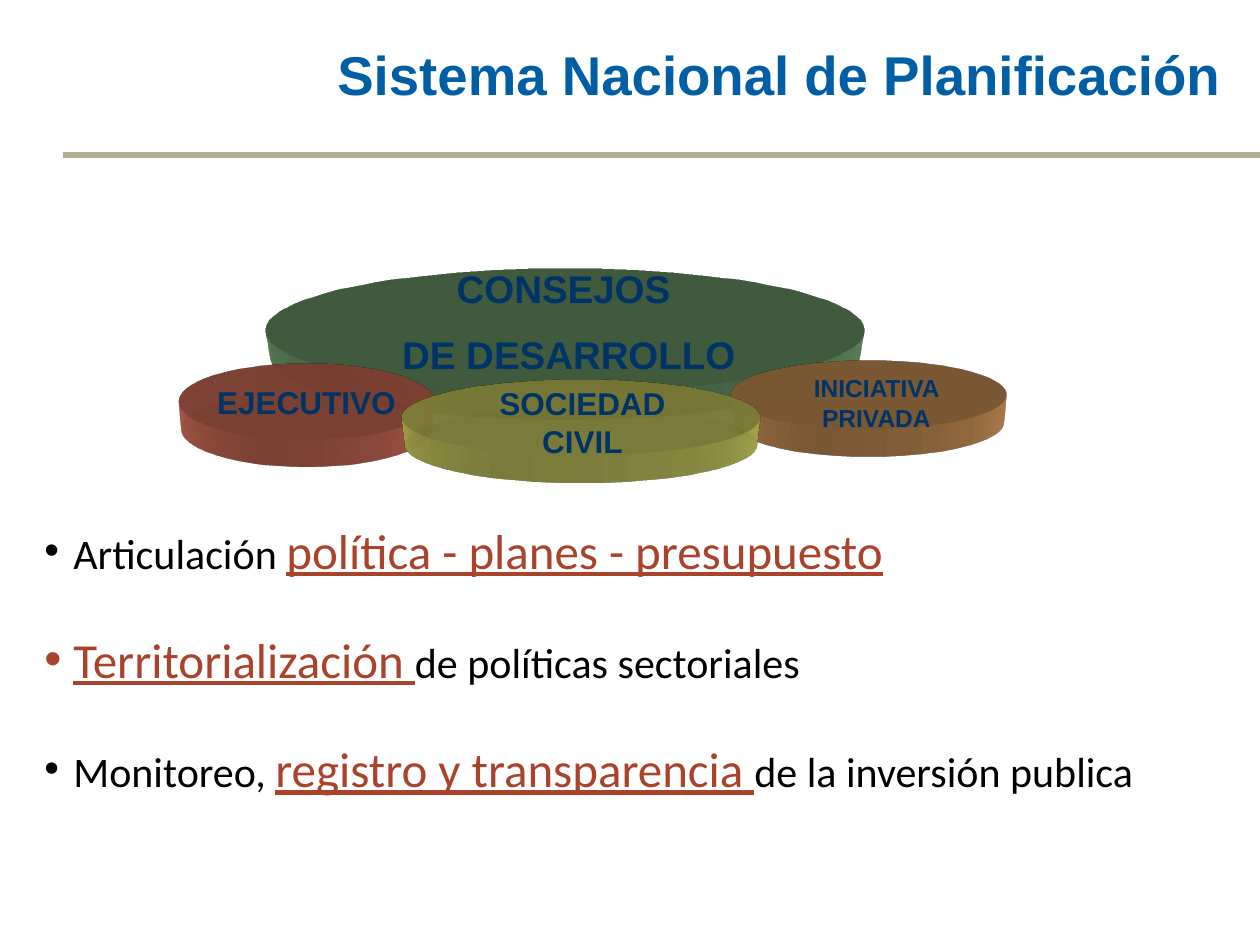
from lxml.etree import SubElement
from pptx import Presentation
from pptx.dml.color import RGBColor
from pptx.enum.shapes import MSO_CONNECTOR, MSO_SHAPE
from pptx.enum.text import MSO_ANCHOR, PP_ALIGN
from pptx.oxml.ns import qn
from pptx.util import Pt

PX = 914400 / 126


def px(length):
    return round(length * PX)


def color(value):
    return RGBColor.from_string(value)


def add_node(parent, tag, **attributes):
    return SubElement(parent, qn(f"a:{tag}"), **attributes)


def add_run(paragraph, text, size=24, font="Calibri", tint="000000", bold=False, underline=False):
    run = paragraph.add_run()
    run.text = text
    run.font.size = Pt(size)
    run.font.name = font
    run.font.bold = bold
    run.font.underline = underline
    run.font.color.rgb = color(tint)


class PlanningSlide:
    """Holds the style and the current slide and draws each kind of element."""

    heading = {"font": "Arial", "tint": "005EA4", "bold": True, "size": 31.2}
    label_style = {"font": "Arial", "tint": "003366", "bold": True}
    plain = {}
    accent = {"size": 28, "tint": "A9432B", "underline": True}

    def __init__(self, deck):
        self.slide = deck.slides.add_slide(deck.slide_layouts[6])
        self.shapes = self.slide.shapes

    def frame(self, left, top, width, height):
        frame = self.shapes.add_textbox(px(left), px(top), px(width), px(height)).text_frame
        frame.word_wrap = True
        return frame

    def title(self, text, *box):
        frame = self.frame(*box)
        frame.vertical_anchor = MSO_ANCHOR.MIDDLE
        add_run(frame.paragraphs[0], text, **self.heading)

    def rule(self, left, right, y):
        line = self.shapes.add_connector(MSO_CONNECTOR.STRAIGHT, px(left), px(y), px(right), px(y))
        line.line.color.rgb = color("B1B095")
        line.line.width = Pt(3)
        add_node(line._element.spPr, "effectLst")

    def disc(self, left, top, width, height, tint, alpha=100):
        disc = self.shapes.add_shape(MSO_SHAPE.OVAL, px(left), px(top), px(width), px(height))
        disc.fill.solid()
        disc.fill.fore_color.rgb = color(tint)
        disc.line.fill.background()
        disc.shadow.inherit = False
        properties = disc._element.spPr
        if alpha < 100:
            add_node(properties.find(f".//{qn('a:srgbClr')}"), "alpha", val=str(alpha * 1000))
        scene = add_node(properties, "scene3d")
        camera = add_node(scene, "camera", prst="legacyPerspectiveFront")
        add_node(camera, "rot", lat="18600000", lon="0", rev="0")
        add_node(scene, "lightRig", rig="legacyFlat3", dir="b")
        solid = add_node(properties, "sp3d", extrusionH=str(px(36)), prstMaterial="legacyMatte")
        add_node(add_node(solid, "extrusionClr"), "srgbClr", val=tint)

    def label(self, lines, size, *box):
        frame = self.frame(*box)
        for index, text in enumerate(lines):
            paragraph = frame.add_paragraph() if index else frame.paragraphs[0]
            paragraph.alignment = PP_ALIGN.CENTER
            if index:
                paragraph.space_before = Pt(size / 2)
            add_run(paragraph, text, size=size, **self.label_style)

    def bullets(self, items, *box):
        frame = self.frame(*box)
        for index, runs in enumerate(items):
            paragraph = frame.add_paragraph() if index else frame.paragraphs[0]
            if index:
                paragraph.space_before = Pt(28.7)
            properties = paragraph._p.get_or_add_pPr()
            properties.set("marL", str(px(29)))
            properties.set("indent", str(-px(29)))
            add_node(properties, "buFont", typeface="Arial")
            add_node(properties, "buChar", char="•")
            for text, style in runs:
                add_run(paragraph, text, **style)


def main():
    deck = Presentation()
    deck.slide_width, deck.slide_height = px(1260), px(945)
    page = PlanningSlide(deck)
    plain, accent = page.plain, page.accent

    page.title("Sistema Nacional de Planificación", 325, 0, 998, 147)
    page.bullets([
        [("Articulación ", plain), ("política - planes - presupuesto", accent)],
        [("Territorialización ", accent), ("de políticas sectoriales", plain)],
        [("Monitoreo, ", plain), ("registro y transparencia ", accent),
         ("de la inversión publica", plain)],
    ], 32, 514, 1292, 354)

    page.disc(267, 231, 596, 192, "648C61")
    page.label(["CONSEJOS", " DE DESARROLLO"], 22, 368, 259, 391, 130)
    page.disc(179, 341, 255, 118, "BF644F", alpha=90)
    page.label(["EJECUTIVO"], 18, 186, 377, 241, 50)
    page.disc(731, 341, 275, 106, "BE8952")
    page.label(["INICIATIVA PRIVADA"], 14, 756, 367, 241, 72)
    page.disc(402, 357, 358, 118, "BCBC56", alpha=84)
    page.label(["SOCIEDAD CIVIL"], 18, 462, 378, 241, 89)

    page.rule(63, 1260, 155)
    deck.save("out.pptx")


if __name__ == "__main__":
    main()
